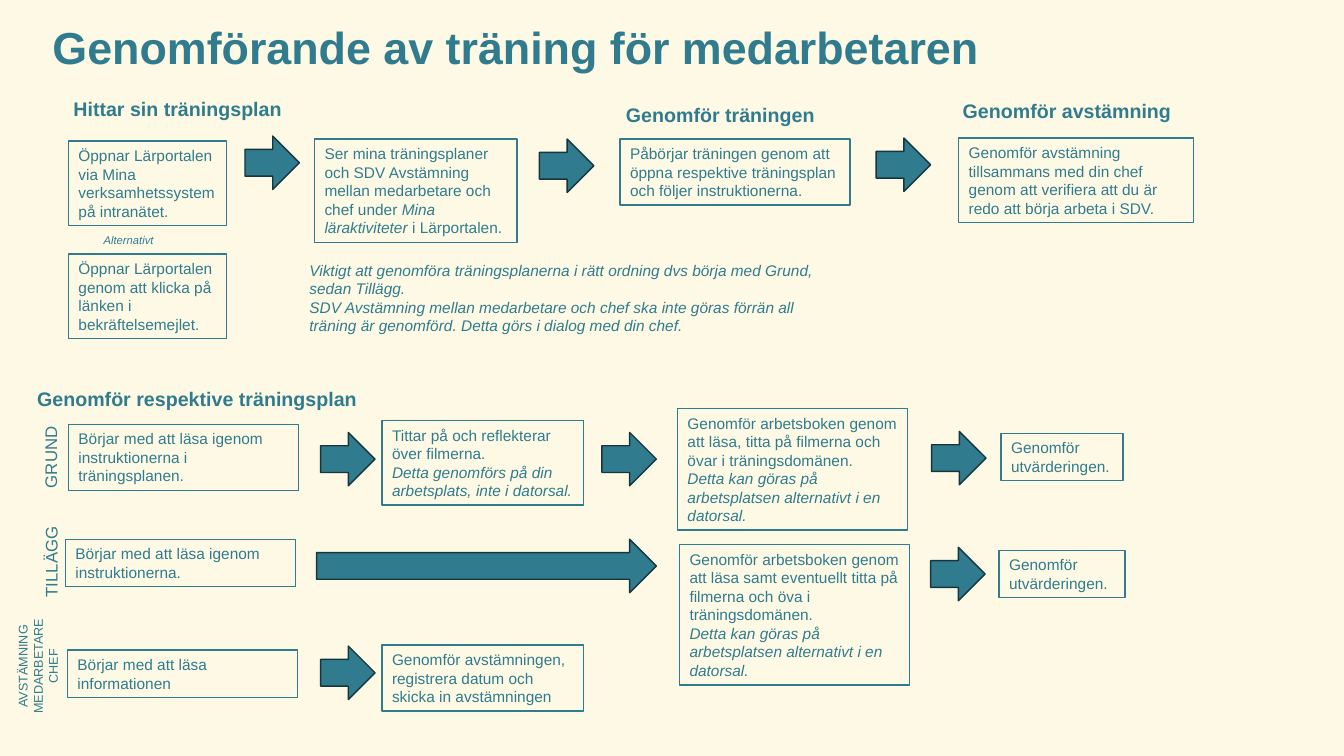
from pptx import Presentation
from pptx.dml.color import RGBColor
from pptx.enum.shapes import MSO_SHAPE
from pptx.enum.text import MSO_ANCHOR, MSO_AUTO_SIZE, PP_ALIGN
from pptx.util import Inches, Pt

RECTANGLE, ARROW = MSO_SHAPE.RECTANGLE, MSO_SHAPE.RIGHT_ARROW
TOP, MIDDLE = MSO_ANCHOR.TOP, MSO_ANCHOR.MIDDLE
LEFT, CENTER = PP_ALIGN.LEFT, PP_ALIGN.CENTER
GROW, FIXED = MSO_AUTO_SIZE.SHAPE_TO_FIT_TEXT, MSO_AUTO_SIZE.NONE

CREAM = RGBColor(0xFD, 0xF9, 0xE4)
TEAL = RGBColor(0x30, 0x7C, 0x8E)
DARK_TEAL = RGBColor(0x15, 0x36, 0x3E)

# Columns and rows shared by the boxes, and the box height for each number of lines
START, WATCH, WORKBOOK, EVALUATE = 0.68, 3.79, 6.72, 9.93
FIND_ROW, BASIC_ROW, EXTRA_ROW, CHECK_ROW = 1.38, 4.21, 5.35, 6.45
WIDE, MEDIUM, NARROW = 2.28, 2.0, 1.57
LINE, MARGINS = 0.185, 0.1
ARROW_WIDTH, ARROW_HEIGHT = 0.54, 0.53

deck = Presentation()
deck.slide_width, deck.slide_height = Inches(13.33), Inches(7.5)
page = deck.slides.add_slide(deck.slide_layouts[5])
page.background.fill.solid()
page.background.fill.fore_color.rgb = CREAM


def write(shape, text, size, bold=False, italic=False, spacing=1.0,
          align=LEFT, anchor=TOP, wrap=True, fit=GROW):
    """Fill a shape with one paragraph per line; parts between underscores are italic."""
    frame = shape.text_frame
    frame.word_wrap, frame.auto_size, frame.vertical_anchor = wrap, fit, anchor
    for index, line in enumerate(text.split("\n")):
        para = frame.add_paragraph() if index else frame.paragraphs[0]
        para.alignment, para.line_spacing = align, spacing
        for part, words in enumerate(line.split("_")):
            if not words:
                continue
            span = para.add_run()
            span.text = words
            span.font.color.rgb = TEAL
            look = {"name": "Arial", "size": Pt(size), "bold": bold,
                    "italic": italic or part % 2 == 1}
            for name, value in look.items():
                setattr(span.font, name, value)


def add_outlined(kind, left, top, width, height, line_color):
    shape = page.shapes.add_shape(kind, *map(Inches, (left, top, width, height)))
    shape.shadow.inherit = False
    shape.line.color.rgb = line_color
    shape.line.width = Pt(1)
    return shape


title = page.shapes.title
title.left, title.top, title.width, title.height = map(Inches, (0.42, 0.09, 11.72, 0.87))
write(title, "Genomförande av träning för medarbetaren", 32, bold=True, spacing=1.1, fit=FIXED)

HEADING = {"size": 14, "bold": True, "spacing": 1.1, "fit": FIXED}
NOTE = {"size": 11, "italic": True}
ROW_LABEL = {"size": 12, "wrap": False}
labels = [
    (0.63, 0.89, 4.56, 0.48, 0, "Hittar sin träningsplan", HEADING),
    (6.11, 0.95, 2.36, 0.46, 0, "Genomför träningen", HEADING),
    (9.45, 0.91, 2.67, 0.46, 0, "Genomför avstämning", HEADING),
    (0.27, 3.77, 4.56, 0.48, 0, "Genomför respektive träningsplan", HEADING),
    (0.93, 2.27, 0.7, 0.24, 0, "Alternativt", {"size": 8, "italic": True, "wrap": False}),
    (2.97, 2.54, 5.5, 0.84, 0,
     "Viktigt att genomföra träningsplanerna i rätt ordning dvs börja med Grund, sedan Tillägg.\n"
     "SDV Avstämning mellan medarbetare och chef ska inte göras förrän all träning är genomförd. "
     "Detta görs i dialog med din chef.", NOTE),
    (0.09, 4.38, 0.82, 0.3, 270, "GRUND", ROW_LABEL),
    (0.05, 5.42, 0.91, 0.3, 270, "TILLÄGG", ROW_LABEL),
    (-0.23, 6.33, 1.22, 0.56, 270, "AVSTÄMNING MEDARBETARE CHEF", {"size": 9, "align": CENTER}),
]
for left, top, width, height, rotation, text, look in labels:
    label = page.shapes.add_textbox(*map(Inches, (left, top, width, height)))
    label.rotation = rotation
    write(label, text, **look)

WORKBOOK_NOTE = "\n_Detta kan göras på arbetsplatsen alternativt i en datorsal._"
EVALUATION = "Genomför utvärderingen."
steps = [  # left, top, width, lines, text
    (START, 1.4, NARROW, 4, "Öppnar Lärportalen via Mina verksamhetssystem på intranätet."),
    (START, 2.52, NARROW, 4, "Öppnar Lärportalen genom att klicka på länken i bekräftelsemejlet."),
    (3.12, FIND_ROW, 2.01, 5,
     "Ser mina träningsplaner och SDV Avstämning mellan medarbetare och chef under "
     "_Mina läraktiviteter _i Lärportalen."),
    (6.15, FIND_ROW, WIDE, 3,
     "Påbörjar träningen genom att öppna respektive träningsplan och följer instruktionerna."),
    (9.51, 1.37, 2.33, 4,
     "Genomför avstämning tillsammans med din chef genom att verifiera att du är redo "
     "att börja arbeta i SDV."),
    (START, BASIC_ROW, WIDE, 3, "Börjar med att läsa igenom instruktionerna i träningsplanen."),
    (WATCH, 4.17, MEDIUM, 4,
     "Tittar på och reflekterar över filmerna.\n"
     "_Detta genomförs på din arbetsplats, inte i datorsal._"),
    (WORKBOOK, 4.05, WIDE, 6,
     "Genomför arbetsboken genom att läsa, titta på filmerna och övar i träningsdomänen."
     + WORKBOOK_NOTE),
    (EVALUATE, 4.3, 1.21, 2, EVALUATION),
    (0.65, EXTRA_ROW, WIDE, 2, "Börjar med att läsa igenom instruktionerna."),
    (6.74, 5.4, WIDE, 7,
     "Genomför arbetsboken genom att läsa samt eventuellt titta på filmerna och öva i "
     "träningsdomänen." + WORKBOOK_NOTE),
    (9.91, 5.46, 1.25, 2, EVALUATION),
    (0.67, CHECK_ROW, WIDE, 2, "Börjar med att läsa informationen"),
    (WATCH, 6.4, MEDIUM, 3, "Genomför avstämningen, registrera datum och skicka in avstämningen"),
]
for left, top, width, lines, text in steps:
    box = add_outlined(RECTANGLE, left, top, width, lines * LINE + MARGINS, TEAL)
    box.fill.background()
    write(box, text, 11, anchor=MIDDLE)

arrows = [
    (2.43, 1.35, ARROW_WIDTH), (5.35, 1.38, ARROW_WIDTH), (8.69, 1.37, ARROW_WIDTH),
    (3.18, 4.29, ARROW_WIDTH), (5.97, 4.29, ARROW_WIDTH), (9.24, 4.28, ARROW_WIDTH),
    (3.14, EXTRA_ROW, 3.37), (9.23, 5.43, ARROW_WIDTH),
    (3.18, 6.41, ARROW_WIDTH),
]
for left, top, width in arrows:
    arrow = add_outlined(ARROW, left, top, width, ARROW_HEIGHT, DARK_TEAL)
    arrow.fill.solid()
    arrow.fill.fore_color.rgb = TEAL

deck.save("out.pptx")
